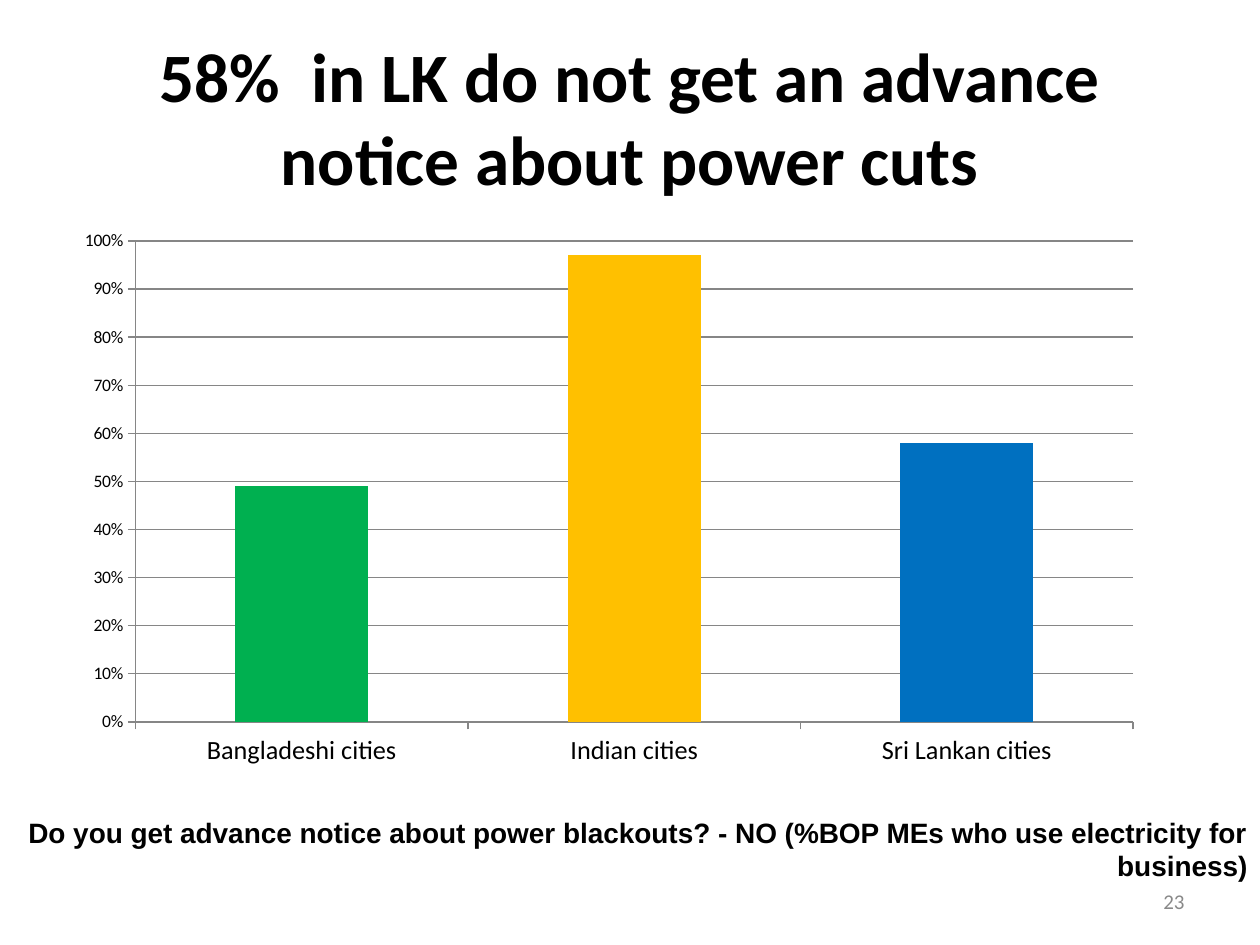
from pptx import Presentation
from pptx.chart.data import CategoryChartData
from pptx.dml.color import RGBColor
from pptx.enum.chart import XL_CHART_TYPE, XL_TICK_MARK
from pptx.enum.text import MSO_ANCHOR, PP_ALIGN
from pptx.util import Emu, Pt

COLUMN = XL_CHART_TYPE.COLUMN_CLUSTERED
OUTSIDE, NO_TICK = XL_TICK_MARK.OUTSIDE, XL_TICK_MARK.NONE
TOP, MIDDLE = MSO_ANCHOR.TOP, MSO_ANCHOR.MIDDLE
CENTER, RIGHT = PP_ALIGN.CENTER, PP_ALIGN.RIGHT


def px(length):
    return Emu(round(length * 914400 / 126))


def color(hex_string):
    return RGBColor.from_string(hex_string)


deck = Presentation()
deck.slide_width, deck.slide_height = px(1260), px(945)
page = deck.slides.add_slide(deck.slide_layouts[6])

texts = [
    ("58%  in LK do not get an advance notice about power cuts",
     (63, 38, 1134, 157), CENTER, MIDDLE, "Calibri", 39.6, True, "000000"),
    ("Do you get advance notice about power blackouts? - NO (%BOP MEs who use electricity for business)",
     (0, 809, 1260, 81), RIGHT, TOP, "Arial", 16, True, "000000"),
    ("23", (903, 876, 294, 50), RIGHT, MIDDLE, "Calibri", 12, False, "898989"),
]
for text, place, align, anchor, font_name, size, bold, ink in texts:
    box = page.shapes.add_textbox(*map(px, place))
    frame = box.text_frame
    frame.word_wrap = True
    frame.vertical_anchor = anchor
    frame.text = text
    para = frame.paragraphs[0]
    para.alignment = align
    span = para.runs[0]
    span.font.name = font_name
    span.font.size = Pt(size)
    span.font.bold = bold
    span.font.color.rgb = color(ink)

data = CategoryChartData(number_format="0%")
data.categories = ["Bangladeshi cities", "Indian cities", "Sri Lankan cities"]
data.add_series("Series 1", [0.49, 0.97, 0.58])
chart = page.shapes.add_chart(COLUMN, px(63), px(220), px(1092), px(557), data).chart
chart.has_title = False
chart.has_legend = False
chart.font.name = "Calibri"
chart.font.size = Pt(10)
chart.font.color.rgb = color("000000")

plot = chart.plots[0]
plot.gap_width = 150
plot.vary_by_categories = False
for index, fill_color in enumerate(["00B050", "FFC000", "0070C0"]):
    bar_fill = plot.series[0].points[index].format.fill
    bar_fill.solid()
    bar_fill.fore_color.rgb = color(fill_color)

value_axis, category_axis = chart.value_axis, chart.category_axis
value_axis.minimum_scale, value_axis.maximum_scale = 0, 1
value_axis.major_unit = 0.1
value_axis.has_major_gridlines = True
value_axis.tick_labels.number_format = "0%"
value_axis.tick_labels.number_format_is_linked = False
category_axis.tick_labels.font.size = Pt(15)
for axis in (value_axis, category_axis):
    axis.major_tick_mark = OUTSIDE
    axis.minor_tick_mark = NO_TICK
for line in (value_axis.format.line, category_axis.format.line,
             value_axis.major_gridlines.format.line):
    line.color.rgb = color("868686")
    line.width = Pt(0.75)

deck.save("out.pptx")
